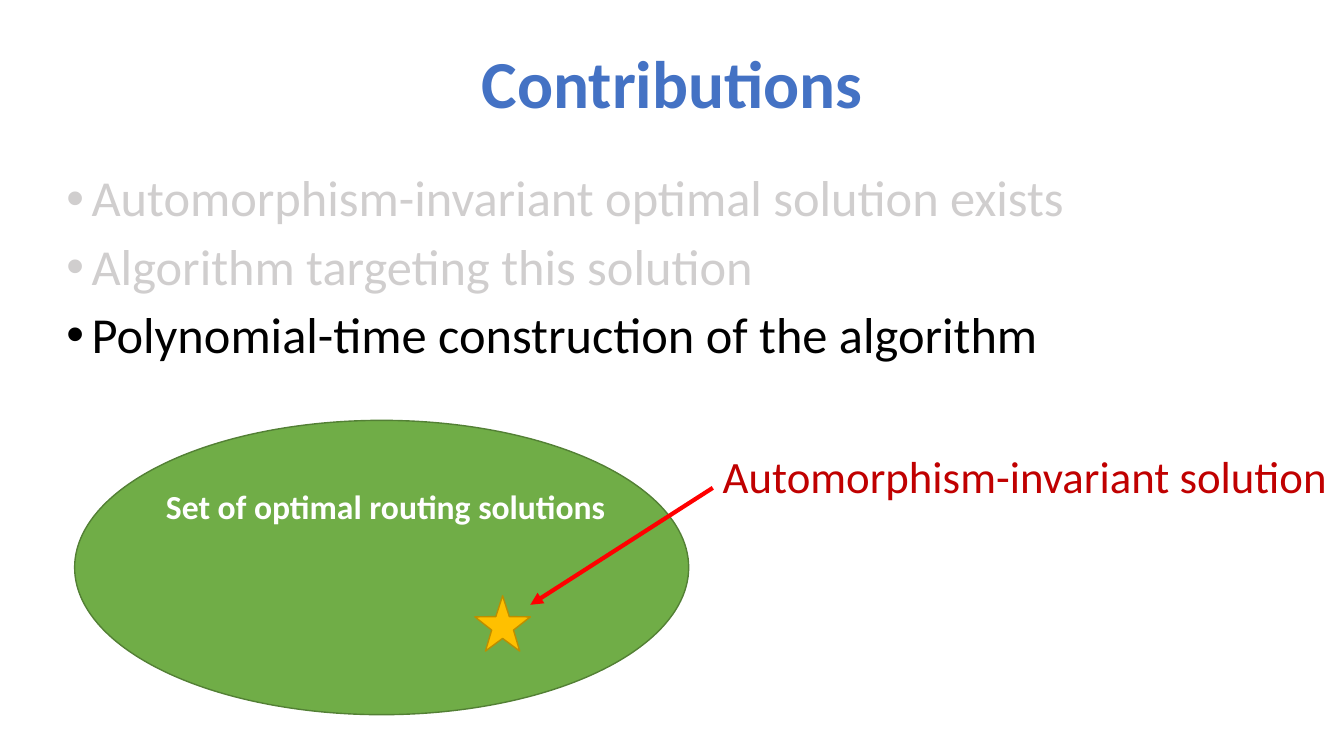
from lxml.etree import SubElement
from pptx import Presentation
from pptx.dml.color import RGBColor
from pptx.enum.shapes import MSO_CONNECTOR, MSO_SHAPE
from pptx.enum.text import MSO_ANCHOR, MSO_AUTO_SIZE, PP_ALIGN
from pptx.oxml.ns import qn
from pptx.util import Inches, Pt

COLORS = {
    "title": "4472C4",
    "faded": "D0CECE",
    "active": "000000",
    "set_fill": "70AD47",
    "set_line": "538035",
    "star_fill": "FFC000",
    "star_line": "BD8E00",
    "solution": "C00000",
    "arrow": "FF0000",
    "white": "FFFFFF",
}


def color(name):
    return RGBColor.from_string(COLORS[name])


class SlideBuilder:
    font_name = "Calibri"

    def __init__(self, presentation):
        self.slide = presentation.slides.add_slide(presentation.slide_layouts[5])

    def style(self, paragraph, size, color_name, bold=False, align=PP_ALIGN.LEFT):
        paragraph.alignment = align
        font = paragraph.font
        font.name = self.font_name
        font.size = Pt(size)
        font.bold = bold
        font.color.rgb = color(color_name)

    def place(self, shape, left, top, width, height):
        shape.left, shape.top = Inches(left), Inches(top)
        shape.width, shape.height = Inches(width), Inches(height)

    def title(self, text, *box):
        title = self.slide.shapes.title
        self.place(title, *box)
        frame = title.text_frame
        frame.text = text
        frame.vertical_anchor = MSO_ANCHOR.MIDDLE
        frame.auto_size = MSO_AUTO_SIZE.NONE
        paragraph = frame.paragraphs[0]
        paragraph.line_spacing = 0.9
        self.style(paragraph, 48, "title", True, PP_ALIGN.CENTER)

    def text_box(self, box, wrap=True):
        frame = self.slide.shapes.add_textbox(*map(Inches, box)).text_frame
        frame.word_wrap = wrap
        return frame

    def label(self, text, box, size, color_name, wrap=True, **style):
        frame = self.text_box(box, wrap)
        frame.auto_size = MSO_AUTO_SIZE.SHAPE_TO_FIT_TEXT
        frame.text = text
        self.style(frame.paragraphs[0], size, color_name, **style)

    def bullets(self, items, box):
        """Add a bulleted list from (text, color name) pairs."""
        frame = self.text_box(box)
        for index, (text, color_name) in enumerate(items):
            paragraph = frame.add_paragraph() if index else frame.paragraphs[0]
            paragraph.text = text
            properties = paragraph._p.get_or_add_pPr()
            properties.set("marL", str(Inches(0.25)))
            properties.set("indent", str(Inches(-0.25)))
            SubElement(properties, qn("a:buFont"), typeface="Arial")
            SubElement(properties, qn("a:buChar"), char="•")
            paragraph.line_spacing = 0.9
            if index:
                paragraph.space_before = Pt(10)
            self.style(paragraph, 36, color_name)

    def shape(self, kind, box, fill, line):
        shape = self.slide.shapes.add_shape(kind, *map(Inches, box))
        shape.shadow.inherit = False
        shape.fill.solid()
        shape.fill.fore_color.rgb = color(fill)
        shape.line.color.rgb = color(line)
        shape.line.width = Pt(1)
        return shape

    def arrow(self, start, end, color_name, width):
        connector = self.slide.shapes.add_connector(
            MSO_CONNECTOR.STRAIGHT, *map(Inches, start + end))
        connector.line.color.rgb = color(color_name)
        connector.line.width = Pt(width)
        SubElement(connector.line._get_or_add_ln(), qn("a:tailEnd"), type="triangle")
        SubElement(connector._element.spPr, qn("a:effectLst"))


def main():
    presentation = Presentation()
    presentation.slide_width = Inches(13.33)
    presentation.slide_height = Inches(7.5)

    builder = SlideBuilder(presentation)
    builder.title("Contributions", 0.56, 0.15, 12.22, 1.42)
    builder.bullets([
        ("Automorphism-invariant optimal solution exists", "faded"),
        ("Algorithm targeting this solution", "faded"),
        ("Polynomial-time construction of the algorithm", "active"),
    ], (0.56, 1.67, 12.22, 2.08))

    builder.shape(MSO_SHAPE.OVAL, (0.74, 4.17, 6.09, 2.92), "set_fill", "set_line")
    star = builder.shape(MSO_SHAPE.STAR_5_POINT, (4.71, 5.91, 0.55, 0.55),
                         "star_fill", "star_line")
    star.adjustments[0] = 0.197
    builder.label("Automorphism-invariant solution", (7.07, 4.4, 6.27, 0.64),
                  32, "solution", wrap=False)
    builder.arrow((7.07, 4.84), (5.26, 6), "arrow", 3)
    builder.label("Set of optimal routing solutions", (1.22, 4.77, 5.21, 0.5),
                  24, "white", bold=True, align=PP_ALIGN.CENTER)

    presentation.save("out.pptx")


if __name__ == "__main__":
    main()
